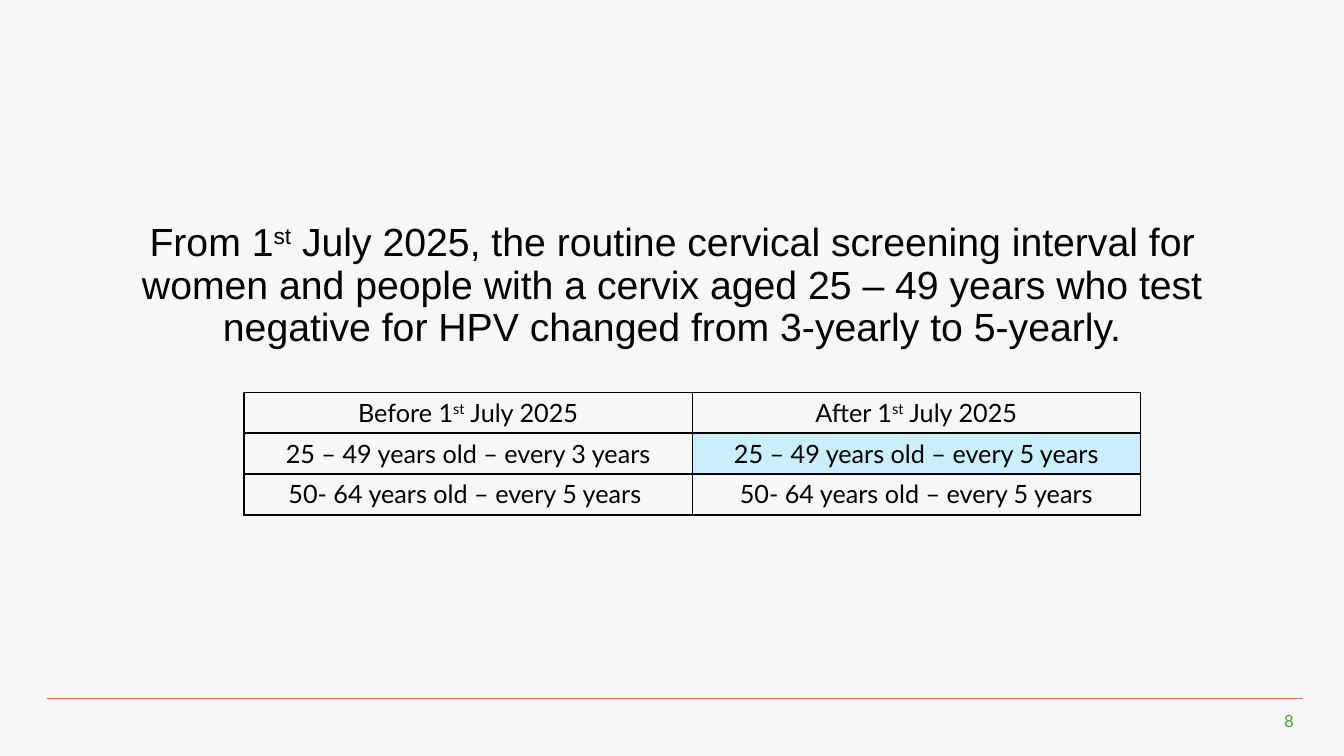
from dataclasses import dataclass

from lxml.etree import SubElement
from pptx import Presentation
from pptx.dml.color import RGBColor
from pptx.enum.shapes import MSO_CONNECTOR as Connector
from pptx.enum.text import MSO_ANCHOR as Anchor, PP_ALIGN as Align
from pptx.oxml.ns import qn
from pptx.util import Inches, Pt

COLORS = {
    "background": "F6F8F8",
    "text": "000000",
    "rule": "E97132",
    "page_number": "4EA72E",
    "highlight": "CAEEFB",
}
SUPERSCRIPT_MARK = "^"


@dataclass(frozen=True)
class TextStyle:
    font: str
    size: float
    color: str
    align: Align = Align.CENTER
    line_spacing: float = 1.0


@dataclass(frozen=True)
class TextBlock:
    text: str
    left: float
    top: float
    width: float
    height: float
    style: TextStyle
    anchor: Anchor = Anchor.TOP
    margin_top: float = 0.05


@dataclass(frozen=True)
class ScheduleCell:
    text: str
    fill: str = ""


BODY_STYLE = TextStyle("Arial", 28, "text", line_spacing=0.9)
TABLE_STYLE = TextStyle("Lato", 18, "text")
NUMBER_STYLE = TextStyle("Lato", 12, "page_number", Align.RIGHT)

TEXT_BLOCKS = [
    TextBlock("8", 12.52, 7, 0.41, 0.3, NUMBER_STYLE, Anchor.MIDDLE),
    TextBlock(
        "From 1^st^ July 2025, the routine cervical screening interval for women "
        "and people with a cervix aged 25 – 49 years who test negative for HPV "
        "changed from 3-yearly to 5-yearly.",
        1.3, 1.32, 10.73, 3.79, BODY_STYLE, margin_top=0.89,
    ),
]
SCHEDULE = [
    [ScheduleCell("Before 1^st^ July 2025"), ScheduleCell("After 1^st^ July 2025")],
    [
        ScheduleCell("25 – 49 years old – every 3 years"),
        ScheduleCell("25 – 49 years old – every 5 years", "highlight"),
    ],
    [
        ScheduleCell("50- 64 years old – every 5 years "),
        ScheduleCell("50- 64 years old – every 5 years"),
    ],
]


def rgb(name: str) -> RGBColor:
    return RGBColor.from_string(COLORS[name])


def write_text(paragraph, text: str, style: TextStyle) -> None:
    paragraph.alignment = style.align
    paragraph.line_spacing = style.line_spacing
    paragraph.font.name = style.font
    paragraph.font.size = Pt(style.size)
    paragraph.font.color.rgb = rgb(style.color)
    for index, part in enumerate(text.split(SUPERSCRIPT_MARK)):
        run = paragraph.add_run()
        run.text = part
        if index % 2:
            run.font._element.set("baseline", "30000")


def add_text_block(slide, block: TextBlock) -> None:
    shape = slide.shapes.add_textbox(
        Inches(block.left), Inches(block.top), Inches(block.width), Inches(block.height)
    )
    frame = shape.text_frame
    frame.word_wrap = True
    frame.vertical_anchor = block.anchor
    frame.margin_top = Inches(block.margin_top)
    write_text(frame.paragraphs[0], block.text, block.style)


def add_footer_rule(slide) -> None:
    rule = slide.shapes.add_connector(
        Connector.STRAIGHT, Inches(0.47), Inches(6.93), Inches(12.92), Inches(6.93)
    )
    rule.line.color.rgb = rgb("rule")
    rule.line.width = Pt(0.5)
    SubElement(rule._element.spPr, qn("a:effectLst"))


def add_borders(cell) -> None:
    properties = cell._tc.get_or_add_tcPr()
    for side in ("lnL", "lnR", "lnT", "lnB"):
        border = SubElement(properties, qn(f"a:{side}"), w=str(Pt(1)))
        fill = SubElement(border, qn("a:solidFill"))
        SubElement(fill, qn("a:srgbClr"), val=COLORS["text"])


def add_schedule(slide) -> None:
    table = slide.shapes.add_table(
        len(SCHEDULE), len(SCHEDULE[0]),
        Inches(2.42), Inches(3.89), Inches(8.89), Inches(1.22),
    ).table
    table.first_row = False
    table.horz_banding = False
    for row_index, row in enumerate(SCHEDULE):
        for column_index, content in enumerate(row):
            cell = table.cell(row_index, column_index)
            add_borders(cell)
            if content.fill:
                cell.fill.solid()
                cell.fill.fore_color.rgb = rgb(content.fill)
            else:
                cell.fill.background()
            write_text(cell.text_frame.paragraphs[0], content.text, TABLE_STYLE)


def main() -> None:
    presentation = Presentation()
    presentation.slide_width = Inches(13.33)
    presentation.slide_height = Inches(7.5)
    slide = presentation.slides.add_slide(presentation.slide_layouts[6])
    slide.background.fill.solid()
    slide.background.fill.fore_color.rgb = rgb("background")
    add_footer_rule(slide)
    for block in TEXT_BLOCKS:
        add_text_block(slide, block)
    add_schedule(slide)
    presentation.save("out.pptx")


if __name__ == "__main__":
    main()
